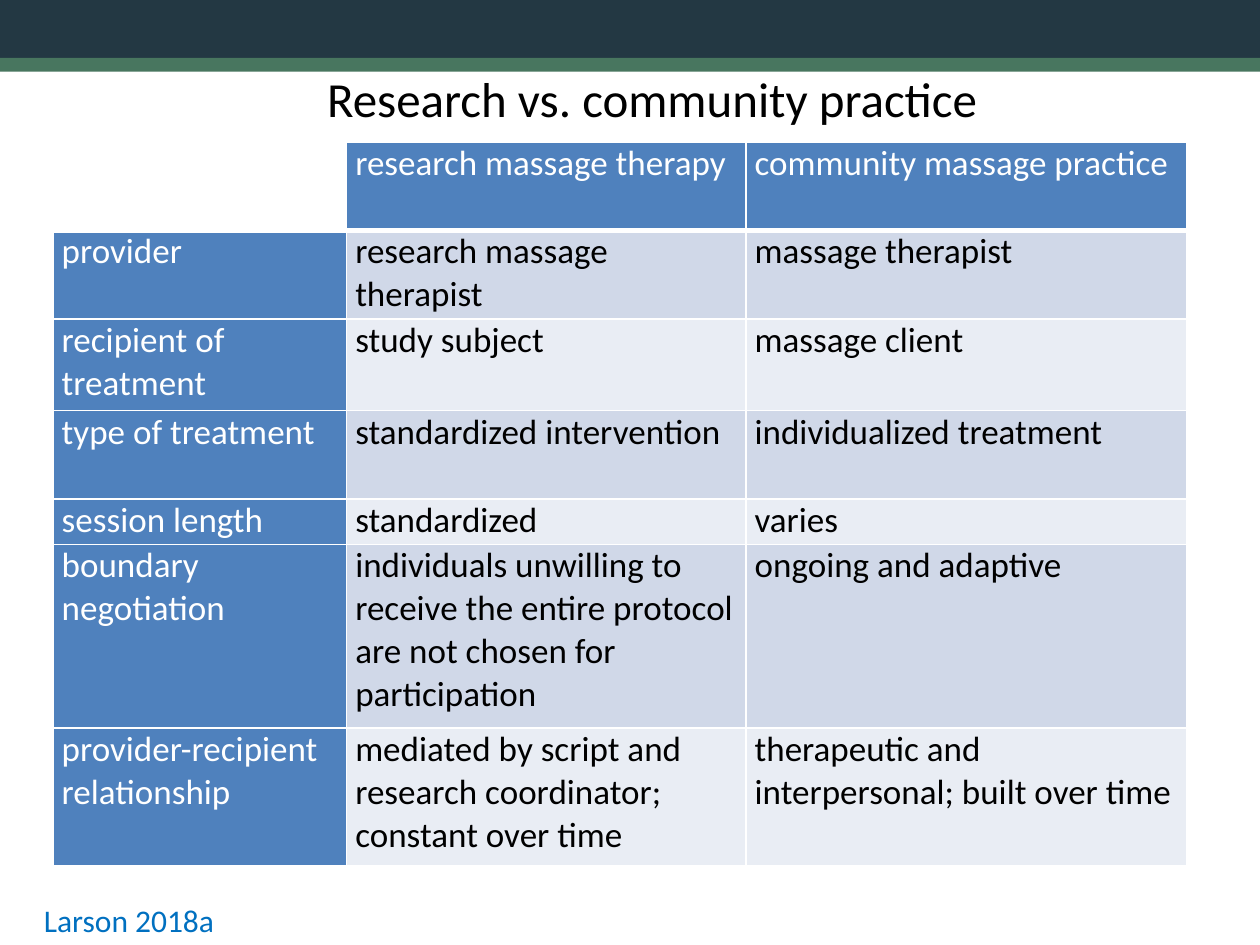
from lxml.etree import SubElement
from pptx import Presentation
from pptx.dml.color import RGBColor
from pptx.enum.shapes import MSO_SHAPE
from pptx.enum.text import MSO_ANCHOR, PP_ALIGN
from pptx.oxml.ns import qn
from pptx.util import Inches, Pt

WHITE, BLACK, BLUE = "FFFFFF", "000000", "4F81BD"
BANDS = ["D0D8E8", "E9EDF4"]


def paint(target, color):
    """Give a fill or a font a solid colour."""
    if hasattr(target, "solid"):
        target.solid()
        target.fore_color.rgb = RGBColor.from_string(color)
    else:
        target.color.rgb = RGBColor.from_string(color)


def write(frame, text, size=20, color=BLACK, align=PP_ALIGN.LEFT, anchor=MSO_ANCHOR.TOP):
    frame.word_wrap = True
    frame.vertical_anchor = anchor
    para = frame.paragraphs[0]
    para.alignment = align
    span = para.add_run()
    span.text = text
    span.font.name, span.font.size, span.font.bold = "Calibri", Pt(size), False
    paint(span.font, color)


deck = Presentation()
deck.slide_width, deck.slide_height = Inches(10), Inches(7.5)
page = deck.slides.add_slide(deck.slide_layouts[5])

# Bands across the top
for top, height, color in [(0, 0.54, "233843"), (0.46, 0.11, "48765F")]:
    band = page.shapes.add_shape(MSO_SHAPE.RECTANGLE, 0, Inches(top), deck.slide_width, Inches(height))
    band.shadow.inherit = False
    paint(band.fill, color)
    band.line.fill.background()

# Title, brought in front of the bands
title = page.shapes.title
title.left, title.top, title.width, title.height = map(Inches, (1.58, 0.27, 7.19, 1.01))
write(title.text_frame, "Research vs. community practice", size=28,
      align=PP_ALIGN.CENTER, anchor=MSO_ANCHOR.MIDDLE)
page.shapes._spTree.append(title._element)

# Comparison table
comparison = [
    ("", "research massage therapy", "community massage practice"),
    ("provider", "research massage therapist", "massage therapist"),
    ("recipient of treatment", "study subject", "massage client"),
    ("type of treatment", "standardized intervention", "individualized treatment"),
    ("session length", "standardized", "varies"),
    ("boundary negotiation",
     "individuals unwilling to receive the entire protocol are not chosen for participation",
     "ongoing and adaptive"),
    ("provider-recipient relationship",
     "mediated by script and research coordinator; constant over time",
     "therapeutic and interpersonal; built over time"),
]
column_widths = [2.33, 3.17, 3.5]
row_heights = [0.7, 0.7, 0.73, 0.7, 0.36, 1.46, 1.09]
table = page.shapes.add_table(len(row_heights), len(column_widths), Inches(0.42), Inches(1.13),
                              Inches(sum(column_widths)), Inches(sum(row_heights))).table
for column, width in zip(table.columns, column_widths):
    column.width = Inches(width)
for row, height in zip(table.rows, row_heights):
    row.height = Inches(height)

for r, texts in enumerate(comparison):
    for c, text in enumerate(texts):
        cell = table.cell(r, c)
        cell.margin_left = cell.margin_right = Inches(0.07)
        cell.margin_top = cell.margin_bottom = 0
        # Borders come before the fill in the cell properties
        for side in ("lnL", "lnR", "lnT", "lnB"):
            weight = 3 if r == 0 and side == "lnB" else 1
            border = SubElement(cell._tc.get_or_add_tcPr(), qn(f"a:{side}"), w=str(Pt(weight)))
            SubElement(SubElement(border, qn("a:solidFill")), qn("a:srgbClr"), val=WHITE)
        if not text:
            cell.fill.background()
            continue
        heading = r == 0 or c == 0
        paint(cell.fill, BLUE if heading else BANDS[(r - 1) % 2])
        write(cell.text_frame, text, color=WHITE if heading else BLACK)

# Citation
citation = page.shapes.add_textbox(Inches(0.25), Inches(7.1), Inches(8.39), Inches(0.4))
write(citation.text_frame, "Larson 2018a", size=18, color="0070C0")

deck.save("out.pptx")
